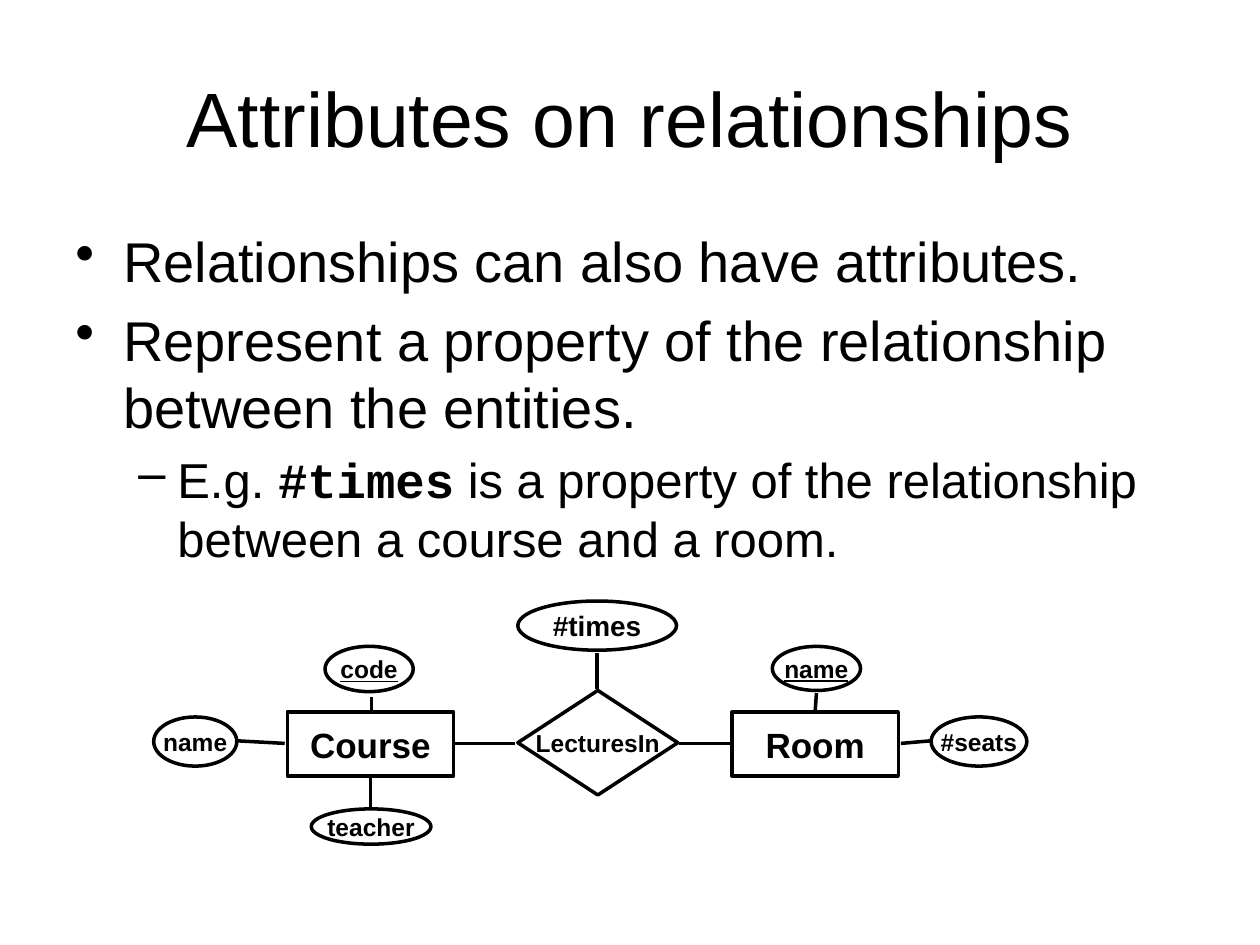
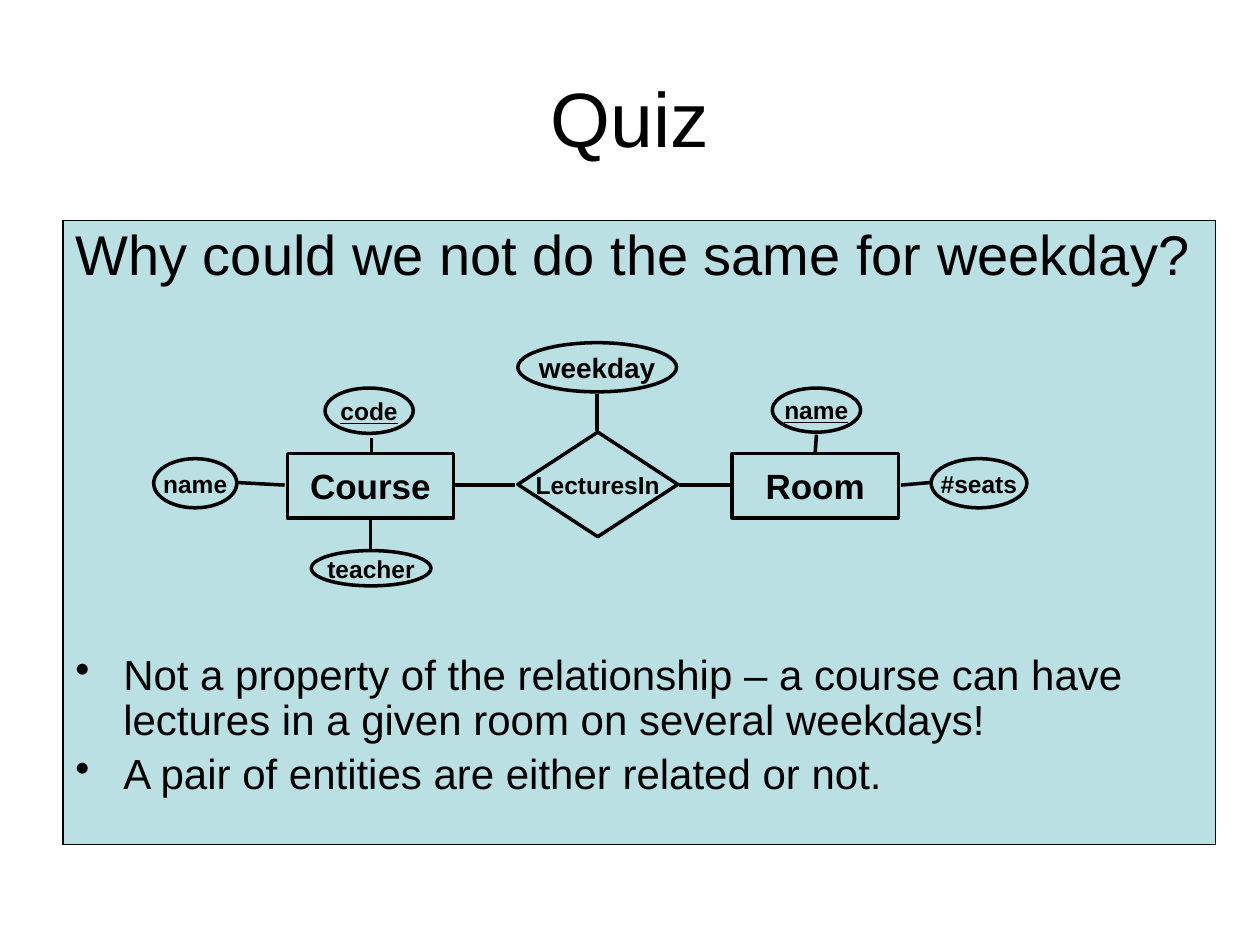
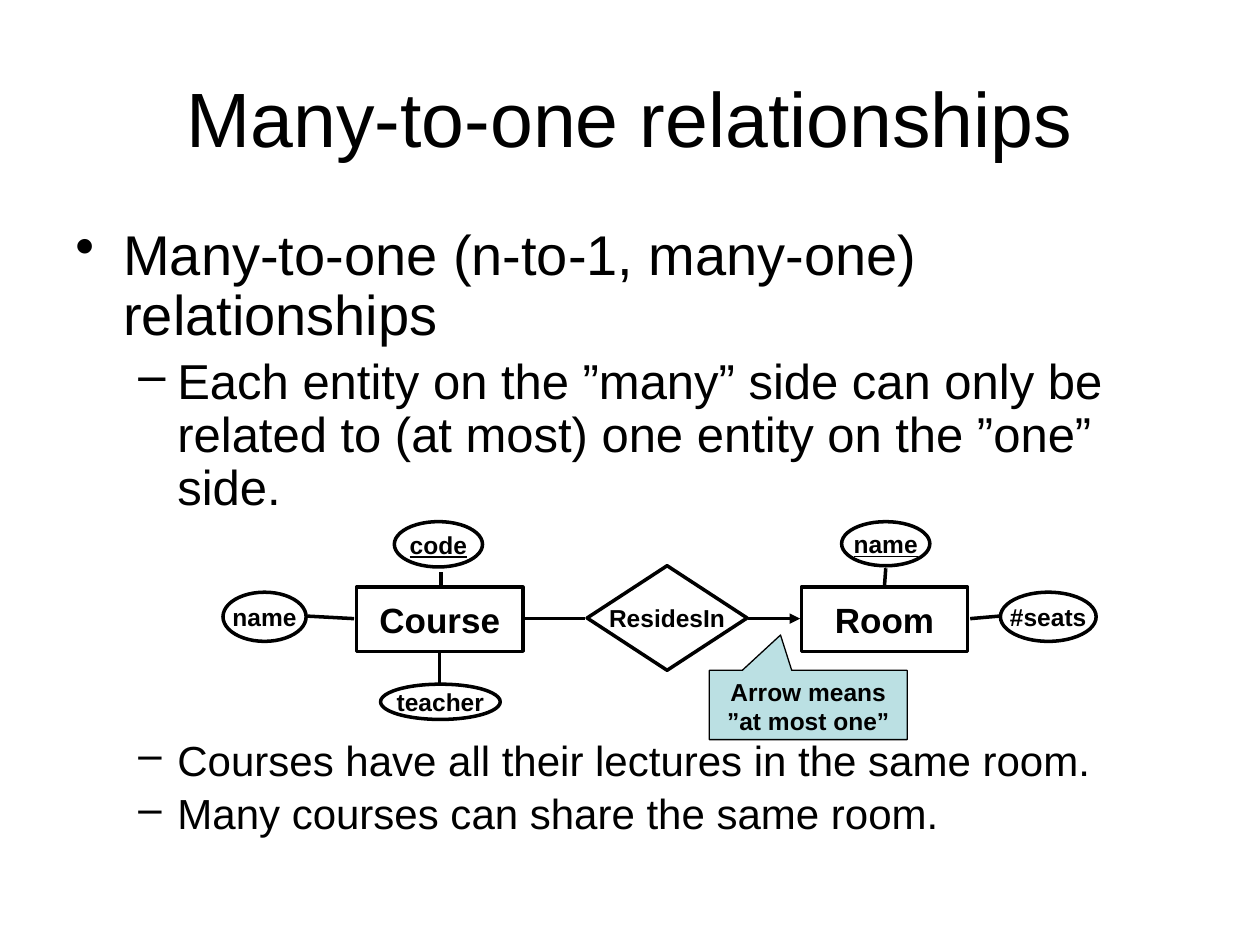
from dataclasses import dataclass

from lxml import etree
from pptx import Presentation
from pptx import util as u
from pptx.dml.color import RGBColor
from pptx.enum import shapes, text
from pptx.oxml import ns

# Shared look
INK = RGBColor(0x00, 0x00, 0x00)
TEAL = RGBColor(0xBB, 0xE0, 0xE3)
SANS, MONO = "Arial", "Courier New"
THICK, THIN = 2, 0.75
TIGHT = 0.9  # line spacing of the denser slides
LEAD = 1.2  # natural line height as a share of the type size
GAP = 0.2  # space before a paragraph, same measure

# Grid of 100 columns by 75 rows
WIDE, HIGH = u.Inches(10), u.Inches(7.5)
COL, ROW = WIDE / 100, HIGH / 75

BOX = shapes.MSO_SHAPE.RECTANGLE
OVAL = shapes.MSO_SHAPE.OVAL
GEM = shapes.MSO_SHAPE.DIAMOND
NOTE = shapes.MSO_SHAPE.RECTANGULAR_CALLOUT
LEFT, MID = text.PP_ALIGN.LEFT, text.PP_ALIGN.CENTER


@dataclass
class Node:
    """Diagram part, placed by its centre, counted from the diamond's centre."""
    label: str
    x: float
    y: float
    w: float
    h: float
    kind: int = OVAL
    size: int = 14
    under: bool = False


@dataclass
class Link:
    x1: float
    y1: float
    x2: float
    y2: float


@dataclass
class Item:
    """Body paragraph; words may hold (words, font) pairs."""
    words: str | list
    size: int
    mark: str = "•"
    level: int = 0
    skip: float = 0  # extra space above, in points


NODES = [
    Node("Course", -18.05, 0.1, 13.2, 5.1, BOX, 20),
    Node("name", -31.95, -0.1, 6.6, 3.9),
    Node("code", -18.15, -5.85, 7, 3.6, under=True),
    Node("teacher", -18, 6.65, 9.5, 2.8),
    Node("Room", 17.25, 0.1, 13.2, 5.1, BOX, 20),
    Node("name", 17.35, -5.9, 7, 3.5, under=True),
    Node("#seats", 30.25, -0.1, 7.6, 3.9),
]
LINKS = [
    Link(-28.55, -0.15, -24.85, 0.05),
    Link(-17.95, -3.65, -17.95, -2.35),
    Link(-18.05, 5.15, -18.05, 2.75),
    Link(17.35, -3.95, 17.25, -2.55),
    Link(26.35, -0.15, 24.05, 0.05),
    Link(-11.35, 0.05, -6.55, 0.05),
]
TO_ROOM = Link(6.45, 0.05, 10.55, 0.05)
TO_EXTRA = Link(-0.05, -4.25, -0.05, -7.15)
INDENTS = [(0.38, -0.38), (0.81, -0.31)]  # left edge and first line, inches


def cols(n: float) -> int:
    return round(n * COL)


def rows(n: float) -> int:
    return round(n * ROW)


def room(*sizes: int) -> float:
    """Points taken up by tight lines of the given type sizes."""
    return sum(size * (LEAD * TIGHT + GAP) for size in sizes)


def write(par, words: str | list, *, size: float, bold: bool = False,
          under: bool = False, align=LEFT) -> None:
    par.alignment = align
    parts = [(words, SANS)] if isinstance(words, str) else words
    for part, face in parts:
        run = par.add_run()
        run.text = part
        font = run.font
        font.name, font.size = face, u.Pt(size)
        font.bold, font.underline = bold or face == MONO, under
        font.color.rgb = INK


def outline(shape, width: float, fill: RGBColor | None = None) -> None:
    shape.shadow.inherit = False
    shape.line.color.rgb, shape.line.width = INK, u.Pt(width)
    if fill is None:
        shape.fill.background()
    else:
        shape.fill.solid()
        shape.fill.fore_color.rgb = fill


def title(slide, words: str) -> None:
    box = slide.shapes.add_textbox(cols(5), rows(3), cols(90), rows(12.5))
    frame = box.text_frame
    frame.word_wrap = True
    frame.vertical_anchor = text.MSO_ANCHOR.MIDDLE
    write(frame.paragraphs[0], words, size=44, align=MID)


def bullet(par, item: Item) -> None:
    left, first = INDENTS[item.level]
    props = par._p.get_or_add_pPr()
    props.set("marL", str(u.Inches(left)))
    props.set("indent", str(u.Inches(first)))
    if item.mark:
        etree.SubElement(props, ns.qn("a:buChar")).set("char", item.mark)
    else:
        etree.SubElement(props, ns.qn("a:buNone"))


def body(slide, items: list[Item], *, w: float = 90, h: float,
         space: float = TIGHT, panel: bool = False) -> None:
    place = cols(5), rows(17.5), cols(w), rows(h)
    if panel:
        box = slide.shapes.add_shape(BOX, *place)
        outline(box, THIN, TEAL)
    else:
        box = slide.shapes.add_textbox(*place)
    frame = box.text_frame
    frame.word_wrap = True
    frame.vertical_anchor = text.MSO_ANCHOR.TOP
    for i, item in enumerate(items):
        par = frame.add_paragraph() if i else frame.paragraphs[0]
        par.level = item.level
        par.line_spacing = space
        par.space_before = u.Pt(round(GAP * item.size + item.skip, 1))
        bullet(par, item)
        write(par, item.words, size=item.size)


def draw(slide, node: Node, x: float, y: float) -> None:
    shape = slide.shapes.add_shape(
        node.kind, cols(x + node.x - node.w / 2), rows(y + node.y - node.h / 2),
        cols(node.w), rows(node.h))
    outline(shape, THICK)
    frame = shape.text_frame
    frame.word_wrap = False
    frame.vertical_anchor = text.MSO_ANCHOR.MIDDLE
    write(frame.paragraphs[0], node.label, size=node.size, bold=True,
          under=node.under, align=MID)


def join(slide, link: Link, x: float, y: float, arrow: bool = False) -> None:
    line = slide.shapes.add_connector(
        shapes.MSO_CONNECTOR.STRAIGHT, cols(x + link.x1), rows(y + link.y1),
        cols(x + link.x2), rows(y + link.y2))
    line.line.color.rgb, line.line.width = INK, u.Pt(THICK)
    if arrow:
        tip = etree.SubElement(line.line._get_or_add_ln(), ns.qn("a:tailEnd"))
        tip.set("type", "triangle")
    etree.SubElement(line._element.spPr, ns.qn("a:effectLst"))


def diagram(slide, x: float, y: float, *, verb: str, extra: str = "",
            arrow: bool = False) -> None:
    """Course and Room joined by a relationship centred at x, y."""
    nodes = NODES + [Node(verb, 0, 0, 12.7, 8.3, GEM)]
    links = list(LINKS)
    if extra:
        nodes.append(Node(extra, -0.05, -9.3, 12.6, 3.9, size=16))
        links.append(TO_EXTRA)
    for node in nodes:
        draw(slide, node, x, y)
    for link in links:
        join(slide, link, x, y)
    join(slide, TO_ROOM, x, y, arrow)


def callout(slide, words: str) -> None:
    note = slide.shapes.add_shape(NOTE, cols(56.3), rows(53.2),
                                  cols(15.7), rows(5.5))
    note.adjustments[0], note.adjustments[1] = -0.14, -1.01
    outline(note, THIN, TEAL)
    frame = note.text_frame
    frame.word_wrap = True
    frame.vertical_anchor = text.MSO_ANCHOR.TOP
    write(frame.paragraphs[0], words, size=14, bold=True, align=MID)


def main() -> None:
    deck = Presentation()
    deck.slide_width, deck.slide_height = WIDE, HIGH
    blank = deck.slide_layouts[6]

    # Attributes on relationships
    slide = deck.slides.add_slide(blank)
    title(slide, "Attributes on relationships")
    body(slide, [
        Item("Relationships can also have attributes.", 32),
        Item("Represent a property of the relationship between the entities.",
             32),
        Item([("E.g. ", SANS), ("#times", MONO),
              (" is a property of the relationship between a course "
               "and a room.", SANS)], 28, "–", 1),
    ], h=29.4, space=1.0)
    diagram(slide, 47.45, 58.95, verb="LecturesIn", extra="#times")

    # Quiz
    slide = deck.slides.add_slide(blank)
    title(slide, "Quiz")
    body(slide, [
        Item("Why could we not do the same for weekday?", 32, ""),
        Item("Not a property of the relationship – a course can have "
             "lectures in a given room on several weekdays!", 24,
             skip=room(*[32] * 5)),
        Item("A pair of entities are either related or not.", 24),
    ], w=91.5, h=49.5, panel=True)
    diagram(slide, 47.45, 38.45, verb="LecturesIn", extra="weekday")

    # Many-to-one relationships
    slide = deck.slides.add_slide(blank)
    title(slide, "Many-to-one relationships")
    body(slide, [
        Item("Many-to-one (n-to-1, many-one) relationships", 32),
        Item("Each entity on the ”many” side can only be related to "
             "(at most) one entity on the ”one” side.", 28, "–", 1),
        Item("Courses have all their lectures in the same room.", 24, "–", 1,
             skip=room(20, 20, 24, 32)),
        Item("Many courses can share the same room.", 24, "–", 1),
    ], h=52.3)
    diagram(slide, 52.95, 49.05, verb="ResidesIn", arrow=True)
    callout(slide, "Arrow means ”at most one”")

    deck.save("out.pptx")


if __name__ == "__main__":
    main()
